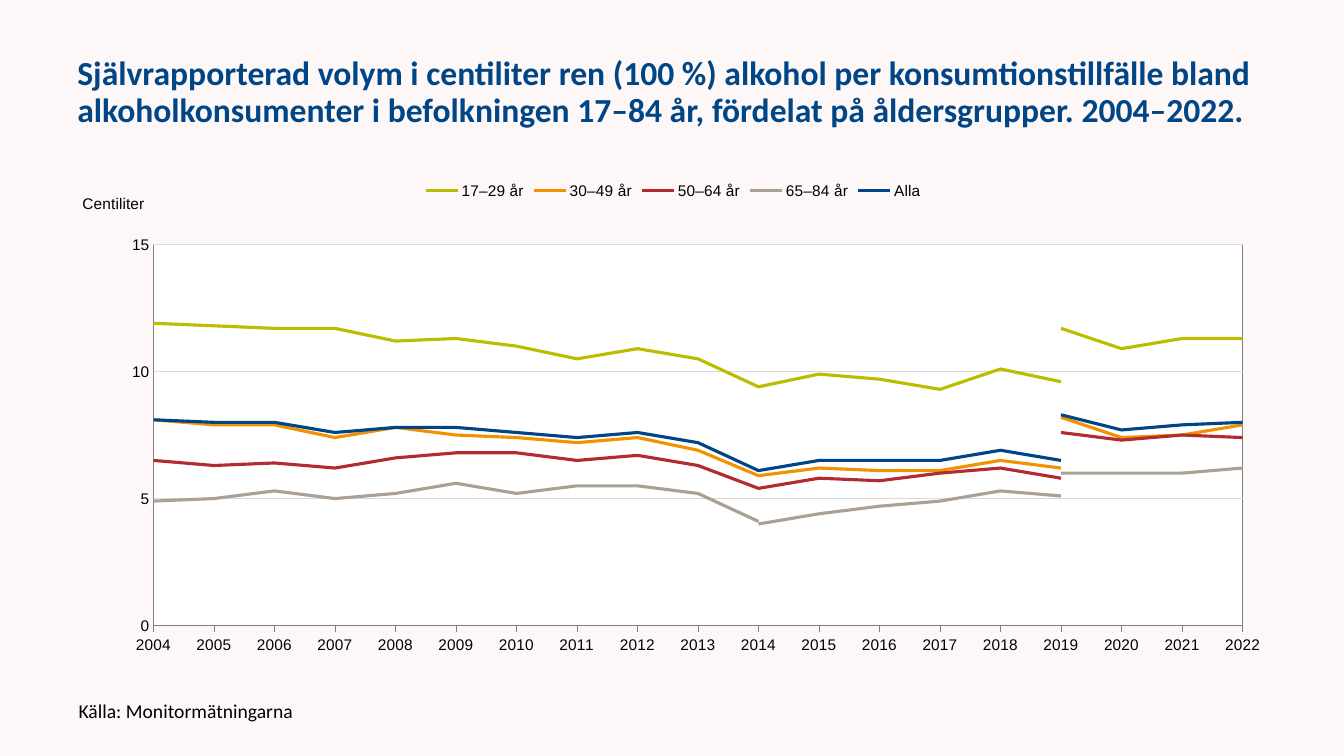
from lxml import etree
from pptx import Presentation
from pptx.chart.data import CategoryChartData
from pptx.dml.color import RGBColor
from pptx.enum.chart import XL_CHART_TYPE, XL_LEGEND_POSITION, XL_TICK_MARK
from pptx.enum.text import MSO_ANCHOR
from pptx.oxml import parse_xml
from pptx.oxml.ns import nsdecls, qn
from pptx.util import Cm, Pt

LINE = XL_CHART_TYPE.LINE
TOP = XL_LEGEND_POSITION.TOP
TICK_NONE, TICK_OUT = XL_TICK_MARK.NONE, XL_TICK_MARK.OUTSIDE
MIDDLE = MSO_ANCHOR.MIDDLE

COLORS = {
    "bg": "FEF7F7", "blue": "004687", "black": "000000", "white": "FFFFFF",
    "axis": "808080", "grid": "D9D9D9", "lime": "BEBC00", "orange": "F29200",
    "red": "B32B31", "taupe": "AAA096",
}
YEARS = list(range(2004, 2023))
AGE_GROUPS = [
    ("17–29 år", "lime",
     (2004, [11.9, 11.8, 11.7, 11.7, 11.2, 11.3, 11, 10.5, 10.9, 10.5, 9.4, 9.9, 9.7, 9.3, 10.1, 9.6]),
     (2019, [11.7, 10.9, 11.3, 11.3])),
    ("30–49 år", "orange",
     (2004, [8.1, 7.9, 7.9, 7.4, 7.8, 7.5, 7.4, 7.2, 7.4, 6.9, 5.9, 6.2, 6.1, 6.1, 6.5, 6.2]),
     (2019, [8.2, 7.4, 7.5, 7.9])),
    ("50–64 år", "red",
     (2004, [6.5, 6.3, 6.4, 6.2, 6.6, 6.8, 6.8, 6.5, 6.7, 6.3, 5.4, 5.8, 5.7, 6, 6.2, 5.8]),
     (2019, [7.6, 7.3, 7.5, 7.4])),
    ("65–84 år", "taupe",
     (2004, [4.9, 5, 5.3, 5, 5.2, 5.6, 5.2, 5.5, 5.5, 5.2, 4.1, None, None, None, None, 6, 6, 6, 6.2]),
     (2014, [4, 4.4, 4.7, 4.9, 5.3, 5.1])),
    ("Alla", "blue",
     (2004, [8.1, 8, 8, 7.6, 7.8, 7.8, 7.6, 7.4, 7.6, 7.2, 6.1, 6.5, 6.5, 6.5, 6.9, 6.5]),
     (2019, [8.3, 7.7, 7.9, 8])),
]


def rgb(name):
    return RGBColor.from_string(COLORS[name])


def by_year(start, values):
    padded = [None] * (start - YEARS[0]) + values
    return padded + [None] * (len(YEARS) - len(padded))


def set_layout(parent, index, **places):
    for old in parent.findall(qn("c:layout")):
        parent.remove(old)
    layout = parse_xml(f"<c:layout {nsdecls('c')}><c:manualLayout/></c:layout>")
    for tag, value in places.items():
        etree.SubElement(layout[0], qn(f"c:{tag}")).set("val", str(value))
    parent.insert(index, layout)


class Deck:
    """Builds text and line charts on the current slide in one style."""

    def __init__(self, prs):
        self.s = prs.slides.add_slide(prs.slide_layouts[6])
        self.s.background.fill.solid()
        self.s.background.fill.fore_color.rgb = rgb("bg")

    def font(self, font, name, size, color="black", bold=False):
        font.name, font.size, font.bold = name, Pt(size), bold
        font.color.rgb = rgb(color)

    def line(self, line, color, width):
        line.color.rgb = rgb(color)
        line.width = Pt(width)

    def text(self, box, text, size, color="black", bold=False):
        tf = self.s.shapes.add_textbox(*map(Cm, box)).text_frame
        tf.word_wrap = True
        tf.vertical_anchor = MIDDLE
        p = tf.paragraphs[0]
        p.line_spacing = 0.9
        r = p.add_run()
        r.text = text
        self.font(r.font, "Calibri", size, color, bold)

    def chart(self, box, groups):
        data = CategoryChartData(number_format="0.0")
        data.categories = [str(year) for year in YEARS]
        for name, _, *periods in groups:
            for start, values in periods:
                data.add_series(name, by_year(start, values))
        chart = self.s.shapes.add_chart(LINE, *map(Cm, box), data).chart
        chart.has_title = False
        self.font(chart.font, "Arial", 11)
        chart.plots[0].vary_by_categories = False
        for i, series in enumerate(chart.plots[0].series):
            series.smooth = False
            self.line(series.format.line, groups[i // 2][1], 2.25)
        self.legend(chart)
        self.axes(chart)
        self.plot_area(chart)

    def legend(self, chart):
        chart.has_legend = True
        legend = chart.legend
        legend.position = TOP
        legend.include_in_layout = False
        self.font(legend.font, "Arial", 11)
        pos = legend._element.find(qn("c:legendPos"))
        for i in reversed(range(1, len(chart.plots[0].series), 2)):
            pos.addnext(parse_xml(
                f'<c:legendEntry {nsdecls("c")}><c:idx val="{i}"/><c:delete val="1"/></c:legendEntry>'))

    def axes(self, chart):
        cat, val = chart.category_axis, chart.value_axis
        for axis, tick in ((cat, TICK_OUT), (val, TICK_NONE)):
            axis.major_tick_mark = tick
            axis.minor_tick_mark = TICK_NONE
            self.line(axis.format.line, "axis", 0.25)
            self.font(axis.tick_labels.font, "Arial", 11)
        val.minimum_scale, val.maximum_scale, val.major_unit = 0, 15, 5
        val.tick_labels.number_format = "0"
        val.tick_labels.number_format_is_linked = False
        val.has_major_gridlines = True
        self.line(val.major_gridlines.format.line, "grid", 0.75)
        for old in val._element.findall(qn("c:crossBetween")):
            val._element.remove(old)
        val._element.find(qn("c:crosses")).addnext(
            parse_xml(f'<c:crossBetween {nsdecls("c")} val="midCat"/>'))
        tf = val.axis_title.text_frame
        tf._txBody.bodyPr.set("rot", "0")
        tf._txBody.bodyPr.set("vert", "horz")
        r = tf.paragraphs[0].add_run()
        r.text = "Centiliter"
        self.font(r.font, "Arial", 11)
        set_layout(val.axis_title._element, 1, xMode="edge", yMode="edge", x=0.01, y=0.04)

    def plot_area(self, chart):
        area = chart._chartSpace.chart.plotArea
        set_layout(area, 0, layoutTarget="inner", xMode="edge", yMode="edge",
                   x=0.071, y=0.149, w=0.899, h=0.764)
        area.append(parse_xml(
            f'<c:spPr {nsdecls("c", "a")}>'
            f'<a:solidFill><a:srgbClr val="{COLORS["white"]}"/></a:solidFill>'
            f'<a:ln w="{Pt(0.25)}"><a:solidFill><a:srgbClr val="{COLORS["axis"]}"/></a:solidFill></a:ln>'
            '</c:spPr>'))


def main():
    prs = Presentation()
    prs.slide_width, prs.slide_height = Cm(33.87), Cm(19.05)
    deck = Deck(prs)
    deck.text((1.7, 0.76, 30.48, 3.18),
              "Självrapporterad volym i centiliter ren (100 %) alkohol per konsumtionstillfälle bland "
              "alkoholkonsumenter i befolkningen 17–84 år, fördelat på åldersgrupper. 2004–2022.",
              24, "blue", True)
    deck.chart((1.7, 4.29, 30.53, 12.57), AGE_GROUPS)
    deck.text((1.73, 17.48, 15.24, 0.94), "Källa: Monitormätningarna", 14)
    prs.save("out.pptx")


if __name__ == "__main__":
    main()
